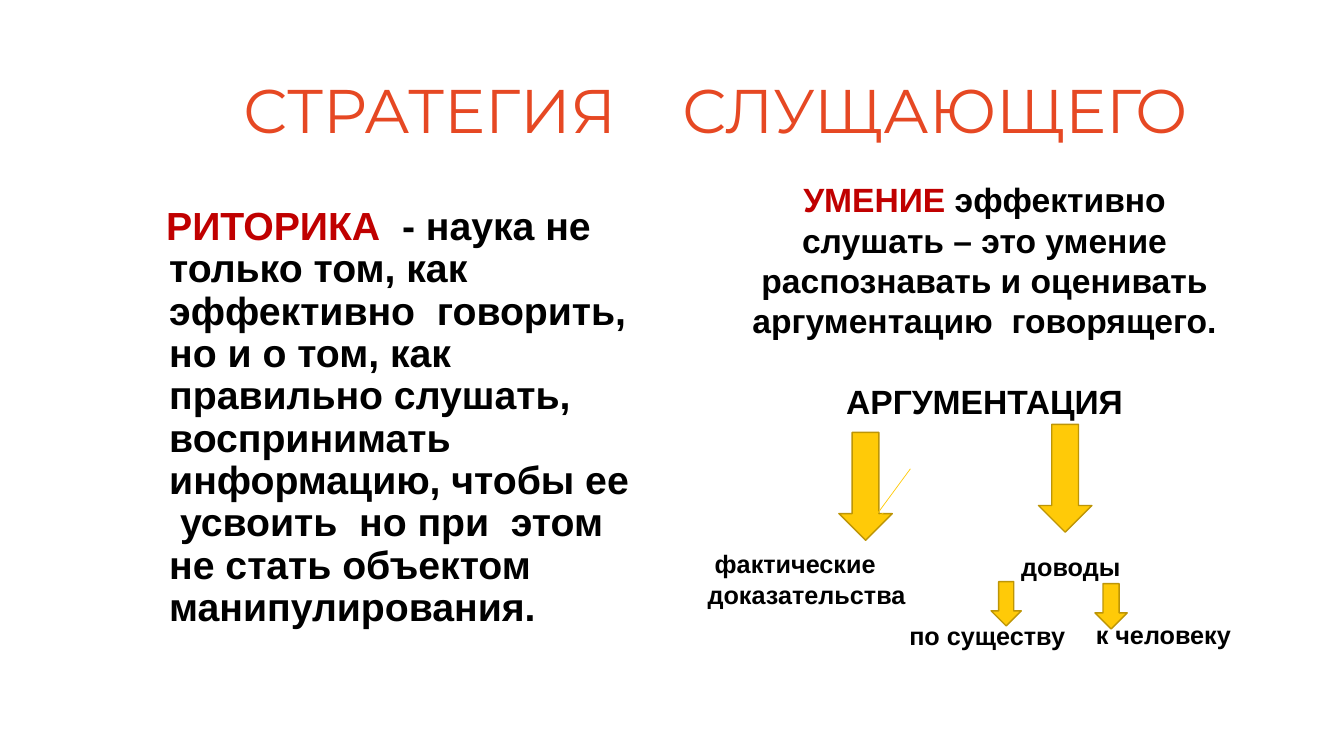
"""Build the slide on the strategy of the listener."""
from pptx import Presentation
from pptx.dml.color import RGBColor
from pptx.enum.shapes import MSO_CONNECTOR, MSO_SHAPE
from pptx.enum.text import MSO_ANCHOR, PP_ALIGN
from pptx.oxml.ns import qn
from pptx.util import Inches, Pt
from lxml import etree

DOWN_ARROW = MSO_SHAPE.DOWN_ARROW
STRAIGHT = MSO_CONNECTOR.STRAIGHT
LEFT, CENTER = PP_ALIGN.LEFT, PP_ALIGN.CENTER
TOP, MIDDLE = MSO_ANCHOR.TOP, MSO_ANCHOR.MIDDLE

THEME = {
    "title": "E64823", "accent": "C00000", "text": "000000",
    "arrow": "FFCA08", "outline": "BD9506",
    "title_font": "Montserrat", "font": "Arial",
    "title_size": 44, "body_size": 28, "skill_size": 24, "label_size": 18,
}

TITLE = "СТРАТЕГИЯ\tСЛУЩАЮЩЕГО"
RHETORIC = [
    ("РИТОРИКА", "accent"),
    ("  - наука не только том, как  эффективно  говорить, но и о том, как  "
     "правильно слушать, воспринимать информацию, чтобы ее  усвоить  но при  "
     "этом не стать объектом манипулирования.", "text"),
]
SKILL = [
    ("УМЕНИЕ", "accent"),
    (" эффективно слушать – это умение распознавать и оценивать "
     "аргументацию  говорящего.", "text"),
]
ARGUMENTATION = [("АРГУМЕНТАЦИЯ", "text")]
LABELS = [
    ("фактические", (6.99, 5.39, 2.22, 0.4)),
    ("доказательства", (6.92, 5.7, 2.29, 0.4)),
    ("доводы", (10.03, 5.42, 1.48, 0.4)),
    ("по существу", (8.92, 6.11, 1.83, 0.4)),
    ("к человеку", (10.77, 6.09, 1.76, 0.4)),
]
ARROWS = [
    (8.32, 4.29, 0.53, 1.07),
    (10.3, 4.21, 0.53, 1.07),
    (9.83, 5.77, 0.3, 0.44),
    (10.86, 5.79, 0.32, 0.45),
]
THIN_ARROW = (9.03, 4.65, 8.67, 5.14)


def color(name):
    return RGBColor.from_string(THEME[name])


def add_text(slide, box, paragraphs, size, font="font", bold=True, align=LEFT,
             anchor=TOP, line_spacing=None, gap=0, margin=0, indent=0, tab=None):
    shape = slide.shapes.add_textbox(*map(Inches, box))
    frame = shape.text_frame
    frame.word_wrap = True
    frame.vertical_anchor = anchor
    for index, runs in enumerate(paragraphs):
        paragraph = frame.add_paragraph() if index else frame.paragraphs[0]
        paragraph.alignment = align
        if line_spacing:
            paragraph.line_spacing = line_spacing
        if index and gap:
            paragraph.space_before = Pt(gap)
        properties = paragraph._p.get_or_add_pPr()
        if margin:
            properties.set("marL", str(Inches(margin)))
            properties.set("indent", str(Inches(indent)))
        if tab:
            tabs = etree.SubElement(properties, qn("a:tabLst"))
            etree.SubElement(tabs, qn("a:tab"), pos=str(Inches(tab)), algn="l")
        for text, color_name in runs:
            run = paragraph.add_run()
            run.text = text
            run.font.name = THEME[font]
            run.font.size = Pt(THEME[size])
            run.font.bold = bold
            run.font.color.rgb = color(color_name)


def add_down_arrow(slide, box):
    shape = slide.shapes.add_shape(DOWN_ARROW, *map(Inches, box))
    shape.shadow.inherit = False
    shape.fill.solid()
    shape.fill.fore_color.rgb = color("arrow")
    shape.line.color.rgb = color("outline")
    shape.line.width = Pt(1)


def add_thin_arrow(slide, ends):
    connector = slide.shapes.add_connector(STRAIGHT, *map(Inches, ends))
    connector.line.color.rgb = color("arrow")
    connector.line.width = Pt(0.5)
    etree.SubElement(connector.line._get_or_add_ln(), qn("a:tailEnd"), type="arrow")
    etree.SubElement(connector._element.spPr, qn("a:effectLst"))


def main():
    presentation = Presentation()
    presentation.slide_width = Inches(13.33)
    presentation.slide_height = Inches(7.5)
    slide = presentation.slides.add_slide(presentation.slide_layouts[6])
    add_text(slide, (2.32, 0.4, 10.24, 1.45), [[(TITLE, "title")]], "title_size",
             font="title_font", bold=False, anchor=MIDDLE, line_spacing=0.9, tab=4.35)
    add_text(slide, (7.35, 1.73, 4.83, 2.52), [SKILL, ARGUMENTATION], "skill_size",
             align=CENTER, gap=28.8)
    add_text(slide, (1.33, 2, 5.05, 4.76), [RHETORIC], "body_size",
             line_spacing=0.9, margin=0.25, indent=-0.03)
    for text, box in LABELS:
        add_text(slide, box, [[(text, "text")]], "label_size")
    for box in ARROWS:
        add_down_arrow(slide, box)
    add_thin_arrow(slide, THIN_ARROW)
    presentation.save("out.pptx")


if __name__ == "__main__":
    main()
